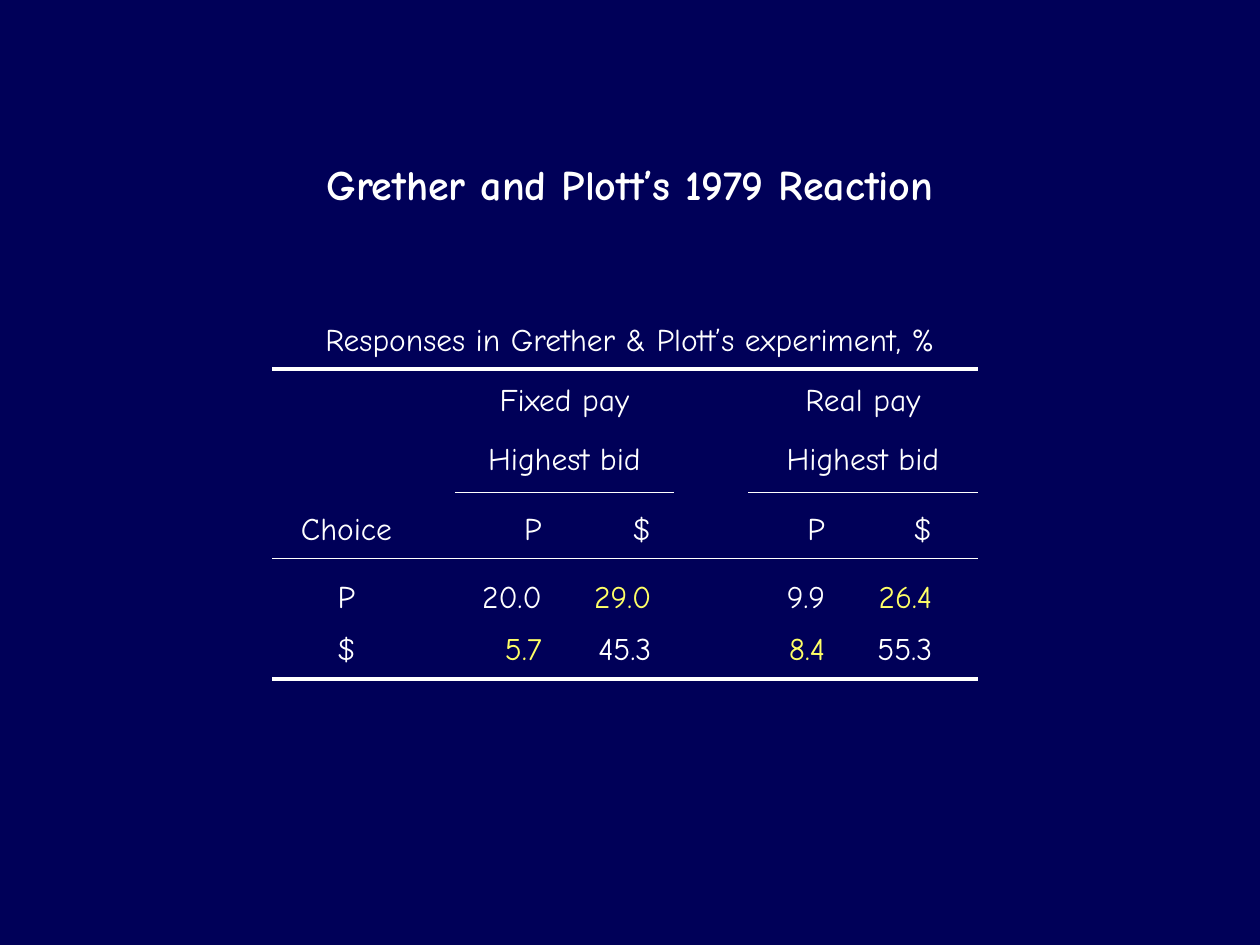
from itertools import pairwise

from pptx import Presentation, util as u
from pptx.dml.color import RGBColor
from pptx.enum import shapes, text
from pptx.oxml import ns, parse_xml

NAVY = RGBColor(0x00, 0x00, 0x58)
WHITE = RGBColor(0xFF, 0xFF, 0xFF)
GOLD = RGBColor(0xFF, 0xFF, 0x66)
MID, RIGHT = text.PP_ALIGN.CENTER, text.PP_ALIGN.RIGHT
PLAIN = "{2D5ABB26-0587-4C30-8999-92F81FD0307C}"

COLS = (2.16, 3.61, 4.4, 5.35, 5.94, 6.65, 7.76)
ROWS = (2.49, 2.93, 3.4, 3.91, 4.43, 4.93, 5.39)
INSETS = ((0.1, 0.37), (0, 0.1), (0, 0.18), (0, 0), (0, 0.1), (0, 0.36))
DROPS = (0, 0.04, 0, 0.08, 0.14, 0)
HEADS = ("Fixed pay", "Real pay")
BODY = (
    ("Choice", "P", "$", "", "P", "$"),
    ("P", "20.0", "29.0", "", "9.9", "26.4"),
    ("$", "5.7", "45.3", "", "8.4", "55.3"),
)
REVERSED = {(4, 2), (4, 5), (5, 1), (5, 4)}
RULES = (
    (2.16, 7.76, 2.93, 2.25),
    (3.61, 5.35, 3.91, 0.75),
    (5.94, 7.76, 3.91, 0.75),
    (2.16, 7.76, 4.43, 0.75),
    (2.16, 7.76, 5.39, 2.25),
)


class Deck:
    """Hold the text style and the current slide, and draw on it."""

    def __init__(self, font, size):
        self.font, self.size = font, size
        self.prs = Presentation()
        self.prs.slide_width, self.prs.slide_height = u.Inches(10), u.Inches(7.5)
        self.slide = self.prs.slides.add_slide(self.prs.slide_layouts[5])
        fill = self.slide.background.fill
        fill.solid()
        fill.fore_color.rgb = NAVY

    def label(self, frame, words, align=MID, color=WHITE, size=None, bold=False):
        para = frame.paragraphs[0]
        para.alignment = align
        run = para.add_run()
        run.text = words
        font = run.font
        font.name, font.size, font.bold = self.font, u.Pt(size or self.size), bold
        font.color.rgb = color

    def title(self, words, left, top, width, height):
        box = self.slide.shapes.title
        box.left, box.top = u.Inches(left), u.Inches(top)
        box.width, box.height = u.Inches(width), u.Inches(height)
        box.fill.solid()
        box.fill.fore_color.rgb = NAVY
        box.text_frame.vertical_anchor = text.MSO_ANCHOR.MIDDLE
        self.label(box.text_frame, words, size=24, bold=True)

    def table(self, cols, rows):
        frame = self.slide.shapes.add_table(
            len(rows) - 1, len(cols) - 1, u.Inches(cols[0]), u.Inches(rows[0]),
            u.Inches(cols[-1] - cols[0]), u.Inches(rows[-1] - rows[0]))
        grid = frame.table
        grid.first_row = grid.horz_banding = False
        next(frame._element.iter(ns.qn("a:tableStyleId"))).text = PLAIN
        for col, (start, end) in zip(grid.columns, pairwise(cols)):
            col.width = u.Inches(end - start)
        for row, (start, end) in zip(grid.rows, pairwise(rows)):
            row.height = u.Inches(end - start)
        for cell in grid.iter_cells():
            cell.fill.background()
        return grid

    def cell(self, grid, row, col, words, span=1, inset=(0, 0), **look):
        box = grid.cell(row, col)
        if span > 1:
            box.merge(grid.cell(row, col + span - 1))
        box.margin_left, box.margin_right = map(u.Inches, inset)
        box.margin_top, box.margin_bottom = u.Inches(DROPS[row]), 0
        box.vertical_anchor = text.MSO_ANCHOR.MIDDLE
        self.label(box.text_frame, words, **look)

    def rule(self, start, end, y, weight):
        line = self.slide.shapes.add_connector(
            shapes.MSO_CONNECTOR.STRAIGHT,
            u.Inches(start), u.Inches(y), u.Inches(end), u.Inches(y))
        line.line.color.rgb = WHITE
        line.line.width = u.Pt(weight)
        line._element.spPr.append(parse_xml(f"<a:effectLst {ns.nsdecls('a')}/>"))


def main():
    deck = Deck("Comic Neue", 18)
    deck.title("Grether and Plott’s 1979 Reaction", 0.75, 0.96, 8.5, 0.99)
    grid = deck.table(COLS, ROWS)
    deck.cell(grid, 0, 0, "Responses in Grether & Plott’s experiment, %",
              span=6, inset=(0.08, 0))
    for col, head in zip((1, 4), HEADS):
        deck.cell(grid, 1, col, head, span=2)
        deck.cell(grid, 2, col, "Highest bid", span=2)
    for row, line in enumerate(BODY, 3):
        for col, words in enumerate(line):
            if words:
                deck.cell(grid, row, col, words, inset=INSETS[col],
                          align=RIGHT if col else MID,
                          color=GOLD if (row, col) in REVERSED else WHITE)
    for rule in RULES:
        deck.rule(*rule)
    deck.prs.save("out.pptx")


if __name__ == "__main__":
    main()
